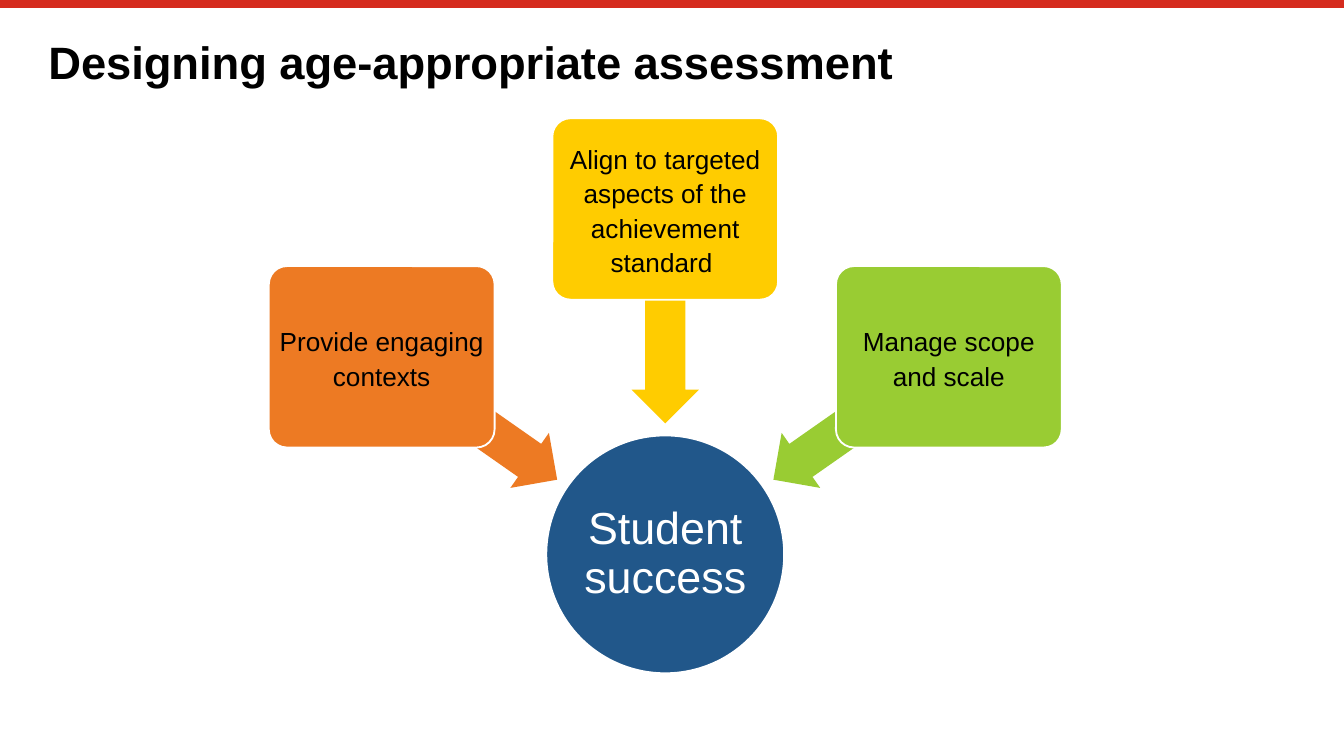
from pptx import Presentation
from pptx.dml.color import RGBColor
from pptx.enum.shapes import MSO_CONNECTOR, MSO_SHAPE
from pptx.enum.text import MSO_ANCHOR, PP_ALIGN
from pptx.oxml.ns import qn
from pptx.util import Inches, Pt
from lxml import etree

STRAIGHT = MSO_CONNECTOR.STRAIGHT
OVAL, ROUNDED = MSO_SHAPE.OVAL, MSO_SHAPE.ROUNDED_RECTANGLE
LEFT_ARROW = MSO_SHAPE.LEFT_ARROW
MIDDLE, CENTER = MSO_ANCHOR.MIDDLE, PP_ALIGN.CENTER

FONT = "Arial"
CENTER_X = 4.95
BOX_STEP, ARROW_STEP = 2.11, 1.46

# text, colour, column, box top, arrow top, arrow rotation
FACTORS = [
    ("Provide engaging contexts", "ED7A23", -1, 1.98, 2.86, 215),
    ("Align to targeted aspects of the achievement standard ", "FFCC00",
     0, 0.88, 2.1, 270),
    ("Manage scope and scale", "99CC33", 1, 1.98, 2.86, 325),
]


def rgb(color):
    return RGBColor.from_string(color)


def write(sp, text, size, color, spacing, inset=0.0, bold=False):
    tf = sp.text_frame
    tf.word_wrap = True
    tf.margin_left = tf.margin_right = Inches(inset)
    tf.margin_top = tf.margin_bottom = Inches(inset)
    p = tf.paragraphs[0]
    p.text = text
    p.line_spacing = spacing
    font = p.runs[0].font
    font.name, font.size, font.bold = FONT, Pt(size), bold
    font.color.rgb = rgb(color)
    return p


def write_centered(sp, text, size, color, spacing, inset):
    p = write(sp, text, size, color, spacing, inset)
    p.alignment = CENTER
    sp.text_frame.vertical_anchor = MIDDLE
    return p


def add_filled_shape(s, kind, x, top, w, h, fill, outlined=True):
    """Add a filled shape centred horizontally on x."""
    sp = s.shapes.add_shape(kind, Inches(x - w / 2), Inches(top),
                            Inches(w), Inches(h))
    sp.shadow.inherit = False
    sp.fill.solid()
    sp.fill.fore_color.rgb = rgb(fill)
    if outlined:
        sp.line.color.rgb = rgb("FFFFFF")
        sp.line.width = Pt(1)
    else:
        sp.line.fill.background()
    return sp


def add_top_rule(s, width):
    rule = s.shapes.add_connector(STRAIGHT, 0, Inches(0.03), width, Inches(0.03))
    rule.line.color.rgb = rgb("D52B1E")
    rule.line.width = Pt(4.2)
    etree.SubElement(rule._element.spPr, qn("a:effectLst"))


def add_title(s, text):
    box = s.shapes.add_textbox(Inches(0.36), Inches(0.3), Inches(9.29), Inches(0.39))
    write(box, text, 24.3, "000000", 0.9, bold=True)


def add_hub(s, text):
    hub = add_filled_shape(s, OVAL, CENTER_X, 3.24, 1.77, 1.77, "21578A")
    write_centered(hub, text, 24, "FFFFFF", 0.9, 0.02)


def add_factor(s, text, color, column, box_top, arrow_top, rotation):
    """Add a box and, behind it, its arrow to the hub."""
    arrow = add_filled_shape(s, LEFT_ARROW, CENTER_X + column * ARROW_STEP,
                             arrow_top, 1.6, 0.5, color, outlined=False)
    arrow.adjustments[0], arrow.adjustments[1] = 0.6, 0.5
    arrow.rotation = rotation

    box = add_filled_shape(s, ROUNDED, CENTER_X + column * BOX_STEP,
                           box_top, 1.68, 1.35, color)
    box.adjustments[0] = 0.1
    p = write_centered(box, text, 14, "000000", 1.1, 0.03)
    p.space_after = Pt(6)


def main():
    prs = Presentation()
    prs.slide_width = Inches(10)
    prs.slide_height = Inches(10 * 9 / 16)
    s = prs.slides.add_slide(prs.slide_layouts[6])
    add_top_rule(s, prs.slide_width)
    add_title(s, "Designing age-appropriate assessment")
    add_hub(s, "Student success")
    for factor in FACTORS:
        add_factor(s, *factor)
    prs.save("out.pptx")


if __name__ == "__main__":
    main()
